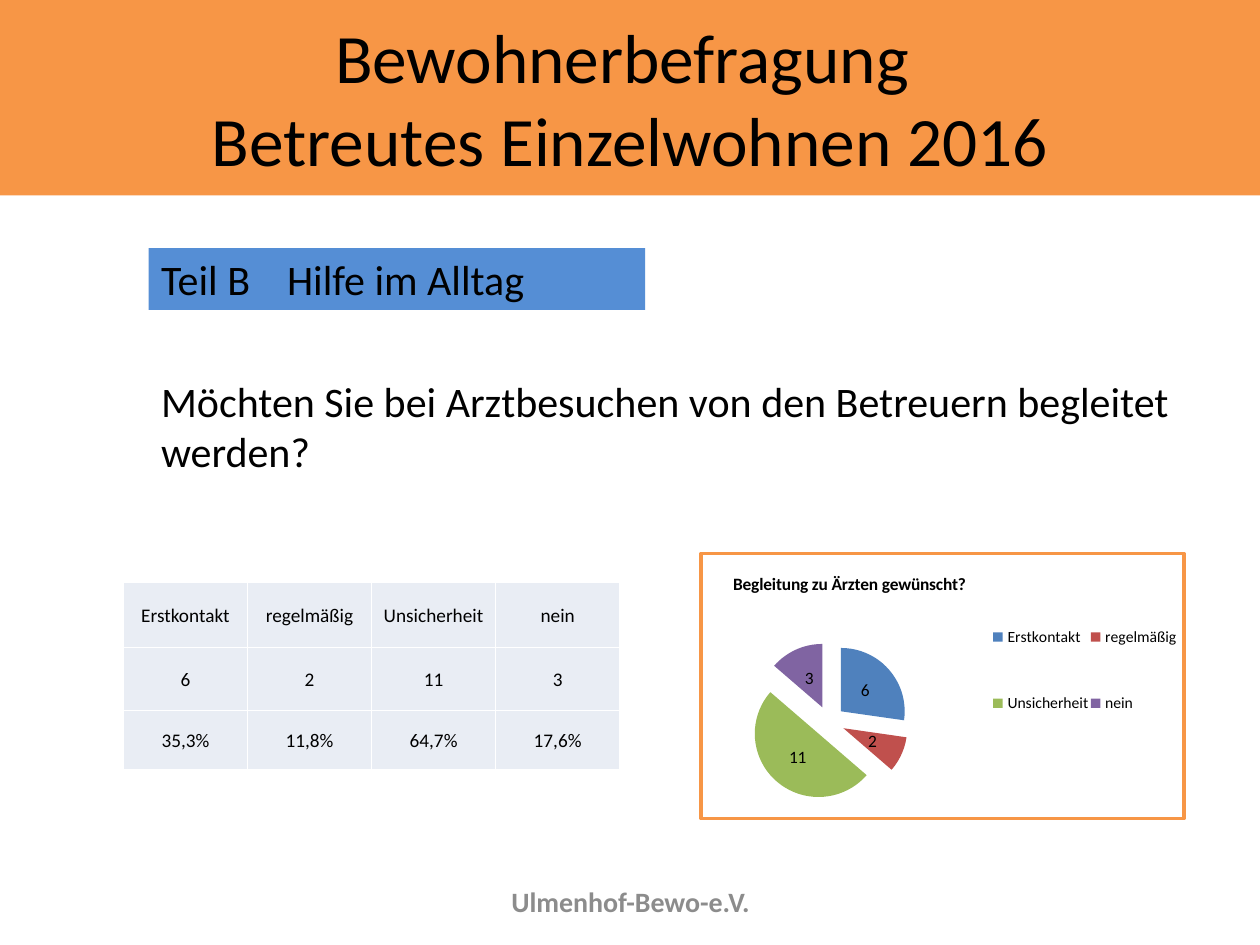
import pptx
import pptx.chart.data
import pptx.dml.color
import pptx.enum.chart
import pptx.enum.shapes
import pptx.enum.text
import pptx.oxml
import pptx.oxml.ns
import pptx.util

Inches = pptx.util.Inches
Pt = pptx.util.Pt
ALIGN = pptx.enum.text.PP_ALIGN
ANCHOR = pptx.enum.text.MSO_ANCHOR

FONT = "Calibri"
ORANGE = "F79646"
ANSWERS = ["Erstkontakt", "regelmäßig", "Unsicherheit", "nein"]
COUNTS = [6, 2, 11, 3]
SHARES = ["35,3%", "11,8%", "64,7%", "17,6%"]
SLICE_COLORS = ["4F81BD", "C0504D", "9BBB59", "8064A2"]


def color(value):
    return pptx.dml.color.RGBColor.from_string(value)


def xml(text):
    tag_end = min(i for i in (text.find(">"), text.find(" "), text.find("/>")) if i > 0)
    namespaces = pptx.oxml.ns.nsdecls("a", "c")
    return pptx.oxml.parse_xml(f"{text[:tag_end]} {namespaces}{text[tag_end:]}")


def write(frame, text, size, bold=False, ink="000000", align=ALIGN.LEFT,
          anchor=ANCHOR.MIDDLE):
    frame.word_wrap = True
    frame.vertical_anchor = anchor
    paragraph = frame.paragraphs[0]
    paragraph.text = text
    paragraph.alignment = align
    for run in paragraph.runs:
        run.font.name = FONT
        run.font.size = Pt(size)
        run.font.bold = bold
        run.font.color.rgb = color(ink)


def add_band(slide, box, fill, text, size, **text_format):
    band = slide.shapes.add_shape(pptx.enum.shapes.MSO_SHAPE.RECTANGLE, *map(Inches, box))
    band.shadow.inherit = False
    band.fill.solid()
    band.fill.fore_color.rgb = color(fill)
    band.line.fill.background()
    write(band.text_frame, text, size, **text_format)


def add_text(slide, box, text, size, **text_format):
    label = slide.shapes.add_textbox(*map(Inches, box))
    write(label.text_frame, text, size, **text_format)


def style_cell(cell):
    cell.fill.solid()
    cell.fill.fore_color.rgb = color("E9EDF4")
    cell.margin_left = cell.margin_right = cell.margin_top = Inches(0.01)
    cell.margin_bottom = 0
    properties = cell._tc.get_or_add_tcPr()
    for position, side in enumerate(("lnL", "lnR", "lnT", "lnB")):
        properties.insert(position, xml(
            f'<a:{side} w="12700"><a:solidFill><a:srgbClr val="FFFFFF"/></a:solidFill></a:{side}>'))


def add_answer_table(slide, box, row_heights):
    rows = [ANSWERS, COUNTS, SHARES]
    table = slide.shapes.add_table(len(rows), len(ANSWERS), *map(Inches, box)).table
    table.first_row = table.horz_banding = False
    for column in table.columns:
        column.width = Inches(box[2] / len(ANSWERS))
    for r, (values, height) in enumerate(zip(rows, row_heights)):
        table.rows[r].height = Inches(height)
        for c, value in enumerate(values):
            cell = table.cell(r, c)
            style_cell(cell)
            write(cell.text_frame, str(value), 11, align=ALIGN.CENTER)
            cell.vertical_anchor = ANCHOR.MIDDLE


def chart_layout(target="", **fractions):
    modes = "".join(f'<c:{axis}Mode val="edge"/>' for axis in "xy")
    values = "".join(f'<c:{key} val="{value}"/>' for key, value in fractions.items())
    return xml(f"<c:layout><c:manualLayout>{target}{modes}{values}</c:manualLayout></c:layout>")


def place(part, after, layout):
    for old in part.findall(pptx.oxml.ns.qn("c:layout")):
        part.remove(old)
    if after is None:
        part.insert(0, layout)
    else:
        part.find(pptx.oxml.ns.qn(after)).addnext(layout)


def add_answer_pie(slide, box):
    answers = pptx.chart.data.CategoryChartData(number_format="#,##0")
    answers.categories = ANSWERS
    answers.add_series("Series 1", COUNTS)
    chart = slide.shapes.add_chart(
        pptx.enum.chart.XL_CHART_TYPE.PIE, *map(Inches, box), answers).chart
    chart.font.name = FONT
    chart.font.size = Pt(10)
    chart.font.color.rgb = color("000000")

    # Title and legend
    chart.has_title = True
    write(chart.chart_title.text_frame, "Begleitung zu Ärzten gewünscht?", 10, bold=True)
    chart.has_legend = True
    legend = chart.legend
    legend.position = pptx.enum.chart.XL_LEGEND_POSITION.RIGHT
    legend.include_in_layout = False
    legend.font.name = FONT
    legend.font.size = Pt(9)

    # Slices and their values
    plot = chart.plots[0]
    plot.vary_by_categories = True
    series = plot.series[0]
    for index, fill in enumerate(SLICE_COLORS):
        slice_fill = series.points[index].format.fill
        slice_fill.solid()
        slice_fill.fore_color.rgb = color(fill)
    series._element.find(pptx.oxml.ns.qn("c:dPt")).addprevious(xml('<c:explosion val="25"/>'))
    for point in series._element.findall(pptx.oxml.ns.qn("c:dPt")):
        point.find(pptx.oxml.ns.qn("c:spPr")).addprevious(xml('<c:explosion val="25"/>'))
    labels = series.data_labels
    labels.show_value = True
    labels.show_percentage = False
    labels.number_format = "#,##0"
    labels.number_format_is_linked = False
    labels.position = pptx.enum.chart.XL_LABEL_POSITION.CENTER
    labels.font.name = FONT
    labels.font.size = Pt(10)

    # Positions inside the frame
    place(chart.chart_title._element, "c:tx", chart_layout(x=0.06, y=0.06))
    place(legend._element, "c:legendPos", chart_layout(x=0.6, y=0.1, w=0.39, h=0.68))
    plot_area = chart._chartSpace.chart.plotArea
    place(plot_area, None, chart_layout(
        '<c:layoutTarget val="inner"/>', x=0.1, y=0.31, w=0.33, h=0.65))

    # Orange frame
    chart._chartSpace.chart.addnext(xml(
        '<c:spPr><a:solidFill><a:srgbClr val="FFFFFF"/></a:solidFill>'
        f'<a:ln w="25400"><a:solidFill><a:srgbClr val="{ORANGE}"/></a:solidFill></a:ln></c:spPr>'))


def main():
    deck = pptx.Presentation()
    deck.slide_width, deck.slide_height = Inches(10), Inches(7.5)
    slide = deck.slides.add_slide(deck.slide_layouts[6])

    add_band(slide, (0, 0, 10, 1.55), ORANGE,
             "Bewohnerbefragung \vBetreutes Einzelwohnen 2016", 39.6, align=ALIGN.CENTER)
    add_band(slide, (1.18, 1.97, 3.94, 0.49), "558ED5", "Teil B\tHilfe im Alltag", 24)
    add_text(slide, (3.42, 6.95, 3.17, 0.4), "Ulmenhof-Bewo-e.V.", 16,
             bold=True, ink="8C8C8C", align=ALIGN.CENTER)
    add_text(slide, (1.18, 2.93, 8.23, 0.91),
             "Möchten Sie bei Arztbesuchen von den Betreuern begleitet werden?", 24,
             anchor=ANCHOR.TOP)
    add_answer_pie(slide, (5.55, 4.38, 3.86, 2.13))
    add_answer_table(slide, (0.98, 4.62, 3.94, 1.5), (0.52, 0.5, 0.47))
    deck.save("out.pptx")


if __name__ == "__main__":
    main()
